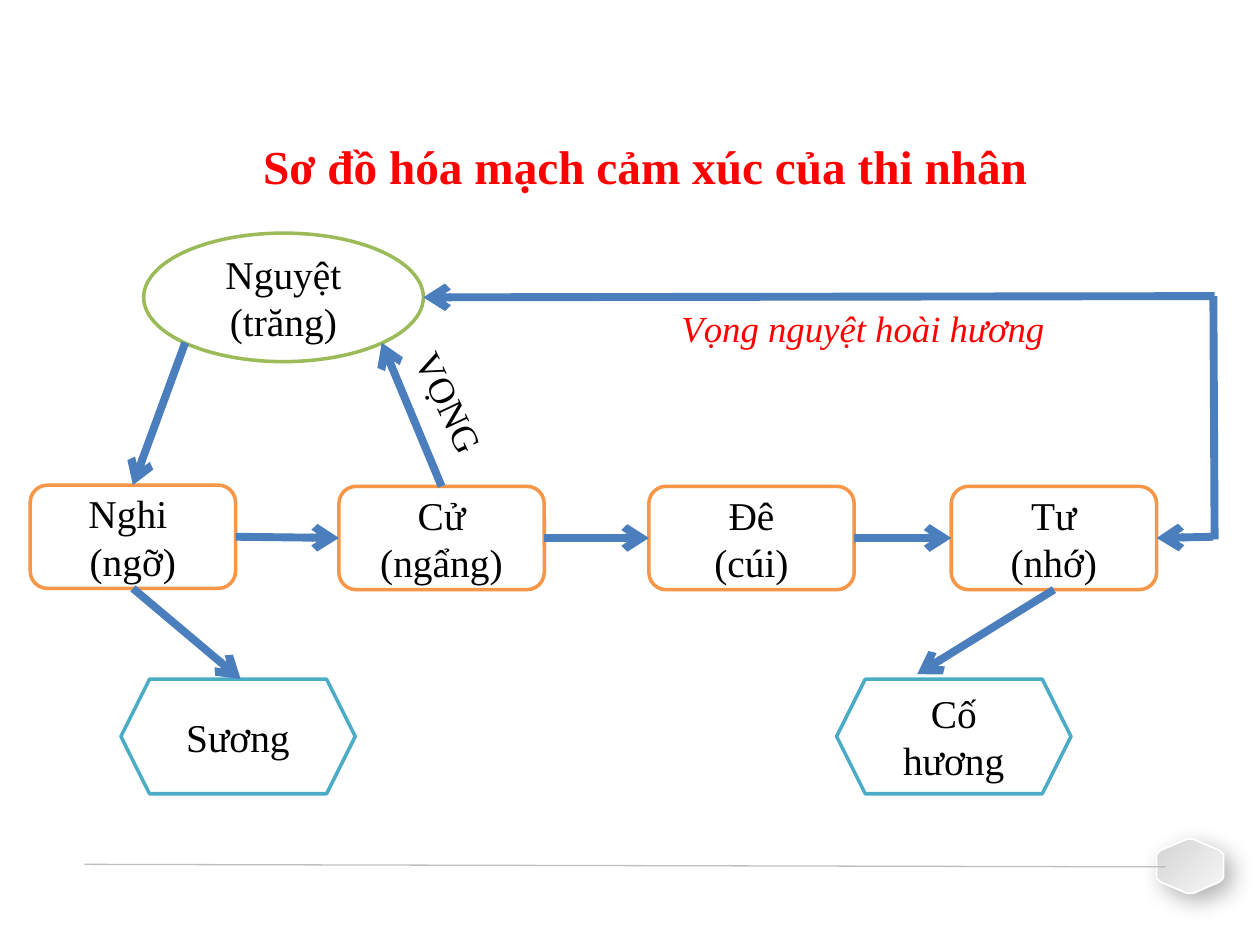
import pptx
import pptx.dml.color
import pptx.enum.dml
import pptx.enum.shapes
import pptx.enum.text
import pptx.oxml
import pptx.oxml.ns
import pptx.util

Inches = pptx.util.Inches
Pt = pptx.util.Pt
RGBColor = pptx.dml.color.RGBColor
SHAPE = pptx.enum.shapes.MSO_SHAPE
ALIGN = pptx.enum.text.PP_ALIGN

FONT = "Times New Roman"
BLACK = RGBColor(0x00, 0x00, 0x00)
WHITE = RGBColor(0xFF, 0xFF, 0xFF)
RED = RGBColor(0xFF, 0x00, 0x00)
BLUE = RGBColor(0x4B, 0x7E, 0xBC)
TEAL = RGBColor(0x4B, 0xAC, 0xC6)
ORANGE = RGBColor(0xF7, 0x96, 0x46)
GREEN = RGBColor(0x9B, 0xBB, 0x59)
RULE_GRAY = RGBColor(0xBF, 0xBF, 0xBF)
BADGE_DARK = RGBColor(0xD4, 0xD4, 0xD4)
BADGE_LIGHT = RGBColor(0xF7, 0xF7, 0xF7)

BADGE_SHADOW = (
    f'<a:effectLst {pptx.oxml.ns.nsdecls("a")}>'
    '<a:outerShdw blurRad="165100" dist="76200" dir="2700000" algn="ctr" rotWithShape="0">'
    '<a:srgbClr val="000000"><a:alpha val="30000"/></a:srgbClr>'
    '</a:outerShdw></a:effectLst>'
)


def add_element(parent, tag, **attributes):
    element = pptx.oxml.parse_xml(f'<a:{tag} {pptx.oxml.ns.nsdecls("a")}/>')
    for name, value in attributes.items():
        element.set(name, value)
    parent.append(element)


def write_lines(frame, lines, size, color, align=ALIGN.CENTER, bold=False, italic=False):
    frame.text = "\n".join(lines)
    for paragraph in frame.paragraphs:
        paragraph.alignment = align
        font = paragraph.font
        font.name, font.size = FONT, Pt(size)
        font.bold, font.italic = bold, italic
        font.color.rgb = color


def add_line(slide, start, end, color=BLUE, width=4.5, arrow=True):
    points = [Inches(value) for value in (*start, *end)]
    connector = slide.shapes.add_connector(pptx.enum.shapes.MSO_CONNECTOR.STRAIGHT, *points)
    connector.line.color.rgb = color
    connector.line.width = Pt(width)
    if arrow:
        add_element(connector.line._get_or_add_ln(), "tailEnd", type="arrow")
    add_element(connector._element.spPr, "effectLst")
    return connector


def add_node(slide, kind, box, color, lines):
    shape = slide.shapes.add_shape(kind, *[Inches(value) for value in box])
    shape.shadow.inherit = False
    shape.fill.solid()
    shape.fill.fore_color.rgb = WHITE
    shape.line.color.rgb = color
    shape.line.width = Pt(2)
    shape.text_frame.vertical_anchor = pptx.enum.text.MSO_ANCHOR.MIDDLE
    write_lines(shape.text_frame, lines, 22.5, BLACK)
    return shape


def add_label(slide, box, text, color, italic=False, rotation=0):
    label = slide.shapes.add_textbox(*[Inches(value) for value in box])
    label.rotation = rotation
    frame = label.text_frame
    frame.word_wrap = False
    frame.auto_size = pptx.enum.text.MSO_AUTO_SIZE.SHAPE_TO_FIT_TEXT
    write_lines(frame, [text], 21, color, ALIGN.LEFT, italic=italic)


def add_badge(slide, box):
    left, top, width, height = box
    side, cap, shoulder, bevel = 0.12, 0.24, 0.09, 0.03
    quarter = [(0, side), (bevel, shoulder), (cap, 0)]
    upper = quarter + [(width - x, y) for x, y in reversed(quarter)]
    outline = upper + [(x, height - y) for x, y in reversed(upper)]
    points = [(Inches(left + x), Inches(top + y)) for x, y in outline]
    builder = slide.shapes.build_freeform(*points[0])
    builder.add_line_segments(points[1:], close=True)
    badge = builder.convert_to_shape()
    badge.fill.gradient()
    badge.fill.gradient_angle = 315
    for stop, color in zip(badge.fill.gradient_stops, (BADGE_DARK, BADGE_LIGHT)):
        stop.color.rgb = color
    badge.fill.gradient_stops[0].position = 0.02
    badge.line.color.rgb = WHITE
    badge.line.width = Pt(1)
    badge._element.spPr.append(pptx.oxml.parse_xml(BADGE_SHADOW))


def add_footer(slide, box):
    left, top, width, height = box
    add_badge(slide, (left + width - 0.53, top, 0.53, height))
    add_line(slide, (left, top + 0.2), (left + 8.58, top + 0.22), RULE_GRAY, 0.75, arrow=False)


def add_title(slide, box):
    title = slide.shapes.add_textbox(*[Inches(value) for value in box])
    frame = title.text_frame
    frame.word_wrap = True
    frame.margin_top = frame.margin_bottom = Inches(0.04)
    write_lines(frame, ["Sơ đồ hóa mạch cảm xúc của thi nhân"], 27, RED, bold=True)
    frame.paragraphs[0].line_spacing = 1.25


def add_diagram(slide, box):
    left, top, width, height = box
    right = left + width

    images = [
        add_node(slide, SHAPE.HEXAGON, (left + x, top + height - 0.91, 1.86, 0.91), TEAL, [text])
        for x, text in ((0.72, "Sương"), (6.4, "Cố hương"))
    ]
    steps = [
        add_node(slide, SHAPE.ROUNDED_RECTANGLE, (left + x, top + y, 1.63, 0.82), ORANGE, lines)
        for x, y, lines in (
            (0, 2, ("Nghi ", "(ngỡ)")),
            (2.45, 2.01, ("Cử", "(ngẩng)")),
            (4.91, 2.01, ("Đê", "(cúi)")),
            (7.31, 2.01, ("Tư", "(nhớ)")),
        )
    ]
    doubt, lift, _, longing = steps

    for source, target in zip(steps, steps[1:]):
        arrow = add_line(slide, (left, top), (right, top))
        arrow.begin_connect(source, 3)
        arrow.end_connect(target, 1)

    for step, image, x, y in ((doubt, images[0], 0.95, 0), (longing, images[1], 0.64, -0.04)):
        end = (image.left.inches + x, image.top.inches + y)
        add_line(slide, (left, top), end).begin_connect(step, 2)

    add_node(slide, SHAPE.OVAL, (left + 0.9, top, 2.22, 1.02), GREEN, ("Nguyệt", "(trăng)"))
    add_line(slide, (left + 1.23, top + 0.87), (left, top)).end_connect(doubt, 0)
    add_line(slide, (left, top), (left + 2.79, top + 0.87)).begin_connect(lift, 0)
    add_label(slide, (left + 2.81, top + 1.12, 1.04, 0.45), "VỌNG", BLACK, rotation=64.8)

    add_line(slide, (right, top + 0.5), (left + 3.12, top + 0.51))
    add_line(slide, (right - 0.01, top + 2.41), (left, top)).end_connect(longing, 3)
    add_line(slide, (right - 0.01, top + 0.5), (right, top + 2.43), arrow=False)
    add_label(slide, (left + 5.07, top + 0.53, 3.08, 0.45), "Vọng nguyệt hoài hương", RED, italic=True)


def main():
    presentation = pptx.Presentation()
    presentation.slide_width = Inches(10)
    presentation.slide_height = Inches(7.5)
    slide = presentation.slides.add_slide(presentation.slide_layouts[6])
    add_footer(slide, (0.67, 6.66, 9.04, 0.43))
    add_title(slide, (1.35, 0.94, 7.54, 0.66))
    add_diagram(slide, (0.24, 1.85, 9.4, 4.45))
    presentation.save("out.pptx")


if __name__ == "__main__":
    main()
